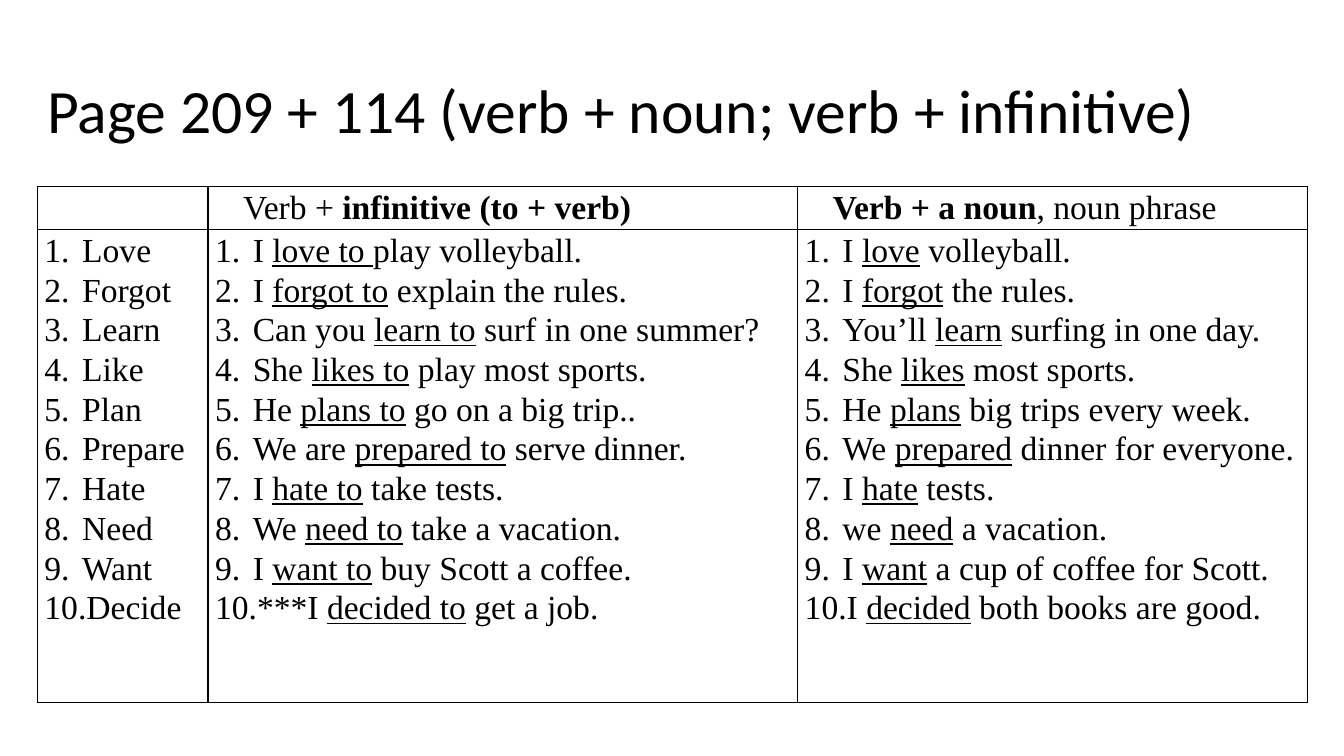
from lxml.etree import SubElement as Sub
from pptx import Presentation as Deck
from pptx.dml.color import RGBColor as Rgb
from pptx.enum.text import MSO_ANCHOR as Anchor, PP_ALIGN as Align
from pptx.oxml.ns import qn
from pptx.util import Cm, Pt

VERBS = ["Love", "Forgot", "Learn", "Like", "Plan", "Prepare", "Hate", "Need", "Want", "Decide"]
TO_VERB = [
    "I |love to |play volleyball.",
    "I |forgot to| explain the rules.",
    "Can you |learn to| surf in one summer?",
    "She |likes to| play most sports.",
    "He |plans to| go on a big trip..",
    "We are |prepared to| serve dinner.",
    "I |hate to| take tests.",
    "We |need to| take a vacation.",
    "I |want to| buy Scott a coffee.",
    "***I |decided to| get a job.",
]
NOUN = [
    "I |love| volleyball.",
    "I |forgot| the rules.",
    "You’ll |learn| surfing in one day.",
    "She |likes| most sports.",
    "He |plans| big trips every week.",
    "We |prepared| dinner for everyone.",
    "I |hate| tests.",
    "we |need| a vacation.",
    "I |want| a cup of coffee for Scott.",
    "I |decided| both books are good.",
]
HEADS = [[], ["Verb + |infinitive (to + verb)|"], ["|Verb + a noun|, noun phrase"]]


def paint(code):
    return Rgb.from_string(code.lstrip("#"))


def write(par, text, font, size, color, mark="bold", space=1.0):
    par.alignment = Align.LEFT
    par.line_spacing = space
    for i, part in enumerate(text.split("|")):
        if part:
            run = par.add_run()
            run.text = part
            run.font.name, run.font.size = font, Pt(size)
            run.font.color.rgb = paint(color)
            run.font.bold = False
            if i % 2:
                setattr(run.font, mark, True)


def indent(par, left, first=0, count=False):
    props = par._p.get_or_add_pPr()
    props.set("marL", str(Cm(left)))
    props.set("indent", str(Cm(first)))
    if count:
        Sub(props, qn("a:buFont"), typeface="+mj-lt")
        Sub(props, qn("a:buAutoNum"), type="arabicPeriod")


class Page:
    ink = "#000000"
    head = "Calibri"
    body = "Times New Roman"

    def __init__(self, deck):
        self.slide = deck.slides.add_slide(deck.slide_layouts[5])

    def title(self, text, box):
        shape = self.slide.shapes.title
        shape.left, shape.top, shape.width, shape.height = map(Cm, box)
        shape.text_frame.vertical_anchor = Anchor.MIDDLE
        write(shape.text_frame.paragraphs[0], text, self.head, 44, self.ink, space=0.9)

    def table(self, grid, left, top, wide, high):
        frame = self.slide.shapes.add_table(
            len(high), len(wide), Cm(left), Cm(top), Cm(sum(wide)), Cm(sum(high)))
        table = frame.table
        table.first_row = table.horz_banding = False
        for col, size in zip(table.columns, wide):
            col.width = Cm(size)
        for row, size in zip(table.rows, high):
            row.height = Cm(size)
        for r, row in enumerate(grid):
            for c, lines in enumerate(row):
                self.cell(table.cell(r, c), lines, listed=r > 0)

    def cell(self, cell, lines, listed):
        cell.margin_left = cell.margin_right = Cm(0.18)
        cell.margin_top = cell.margin_bottom = 0
        self.edge(cell)
        cell.fill.background()
        frame = cell.text_frame
        for i, text in enumerate(lines):
            par = frame.add_paragraph() if i else frame.paragraphs[0]
            mark = "underline" if listed else "bold"
            write(par, text, self.body, 24, self.ink, mark, 1.07)
            if listed:
                indent(par, 0.95, -0.95, True)
            else:
                indent(par, 0.71)

    def edge(self, cell):
        props = cell._tc.get_or_add_tcPr()
        for side in ("lnL", "lnR", "lnT", "lnB"):
            line = Sub(props, qn("a:" + side), w=str(Pt(1)))
            fill = Sub(line, qn("a:solidFill"))
            Sub(fill, qn("a:srgbClr"), val=self.ink.lstrip("#"))


def main():
    deck = Deck()
    deck.slide_width, deck.slide_height = Cm(33.87), Cm(19.05)
    page = Page(deck)
    page.title("Page 209 + 114 (verb + noun; verb + infinitive)", (0.94, 1.02, 32.44, 3.68))
    page.table([HEADS, [VERBS, TO_VERB, NOUN]], 0.94, 4.7, [4.3, 14.86, 12.84], [1.09, 11.91])
    deck.save("out.pptx")


if __name__ == "__main__":
    main()
